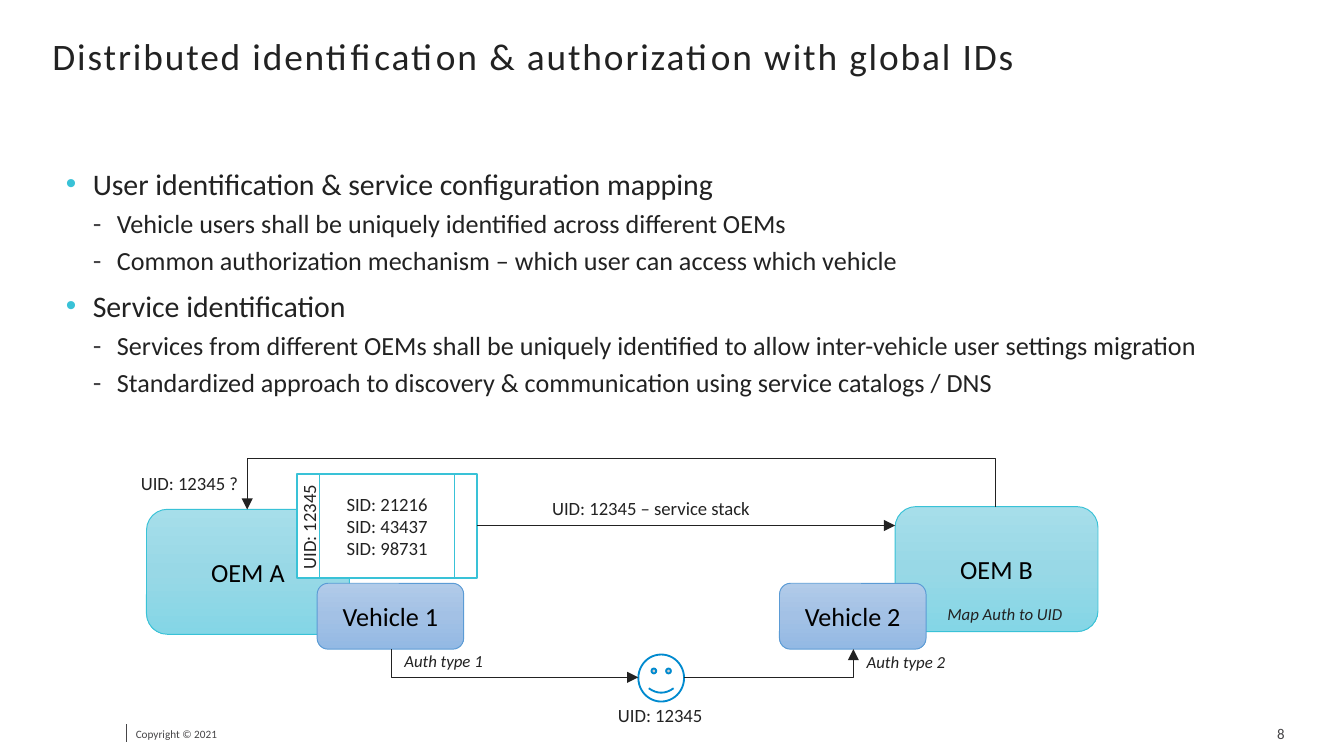
from lxml import etree
from pptx import Presentation
from pptx.dml.color import RGBColor
from pptx.enum import shapes, text
from pptx.oxml import ns
from pptx.util import Inches, Pt

THEME = dict(
    font="Calibri", ink="222222", gray="464547", black="000000", white="FFFFFF",
    cyan="39C2D7", blue="5B9BD5", face="008ACF",
    oem=("A6DEEA", "98D8E6", "84D6E6"), vehicle=("B1CBE9", "A3C1E5", "93B9E4"),
    title=20, level1=16, level2=14, box=14, label=10, note=9, number=8, footer=6,
)
T = THEME

# Content
TITLE = "Distributed identification & authorization with global IDs"
BULLETS = [
    ("User identification & service configuration mapping", [
        "Vehicle users shall be uniquely identified across different OEMs",
        "Common authorization mechanism – which user can access which vehicle"]),
    ("Service identification", [
        "Services from different OEMs shall be uniquely identified to allow "
        "inter-vehicle user settings migration",
        "Standardized approach to discovery & communication using service catalogs / DNS"]),
]
OEMS = [("OEM B", 6.66, 3.77), ("OEM A", 1.09, 3.79)]
VEHICLES = [("Vehicle 1", 2.36), ("Vehicle 2", 5.8)]
SERVICE_IDS = ["SID: 21216", "SID: 43437", "SID: 98731"]
LABELS = [  # text, left, top, width, rotation
    ("UID: 12345", 1.88, 3.78, 0.84, 270),
    ("UID: 12345 ?", 0.95, 3.46, 0.94, 0),
    ("UID: 12345 – service stack", 4.01, 3.65, 1.69, 0),
    ("UID: 12345", 4.5, 5.19, 0.84, 0),
]
NOTES = [  # text, left, top, width
    ("Auth type 1", 2.91, 4.79, 0.79),
    ("Auth type 2", 6.35, 4.8, 0.79),
    ("Map Auth to UID", 6.95, 4.44, 1.07),
]
LEVELS = [  # size, left margin, hanging, space before, line spacing, bullet, bullet colour
    (T["level1"], 0.2, 0.2, 6, 1.0, "•", T["cyan"]),
    (T["level2"], 0.38, 0.18, 5, 0.9, "-", T["gray"]),
]

# Widescreen page, 16 to 9
prs = Presentation()
prs.slide_width = Inches(10)
prs.slide_height = Inches(10 * 9 / 16)
s = prs.slides.add_slide(prs.slide_layouts[1])


def rgb(value):
    return RGBColor.from_string(value)


def sub(parent, tag, **attrs):
    return etree.SubElement(parent, ns.qn(tag), attrs)


def write(p, words, size=T["label"], color=T["ink"], align="LEFT", italic=False, spacing=0):
    p.alignment = getattr(text.PP_ALIGN, align)
    r = p.add_run()
    r.text = words
    r.font.name, r.font.size, r.font.italic = T["font"], Pt(size), italic
    r.font.color.rgb = rgb(color)
    if spacing:
        r._r.get_or_add_rPr().set("spc", str(int(spacing * 100)))


def frame(sp, anchor="TOP", wrap=True, inset=(0.1, 0.05)):
    tf = sp.text_frame
    tf.word_wrap, tf.auto_size = wrap, text.MSO_AUTO_SIZE.NONE
    tf.vertical_anchor = getattr(text.MSO_ANCHOR, anchor)
    tf.margin_left = tf.margin_right = Inches(inset[0])
    tf.margin_top = tf.margin_bottom = Inches(inset[1])
    return tf


def place(sp, *box):
    sp.left, sp.top, sp.width, sp.height = map(Inches, box)


def label(words, *box, rotation=0, anchor="TOP", wrap=False, inset=(0.1, 0.05), **fmt):
    sp = s.shapes.add_textbox(*map(Inches, box))
    sp.rotation = rotation
    write(frame(sp, anchor, wrap, inset).paragraphs[0], words, **fmt)


def shape(kind, box, line, fill, lines=(), width=0.5, **fmt):
    sp = s.shapes.add_shape(getattr(shapes.MSO_SHAPE, kind), *map(Inches, box))
    sp.shadow.inherit = False
    sp.line.color.rgb, sp.line.width = rgb(line), Pt(width)
    if isinstance(fill, str):
        sp.fill.solid()
        sp.fill.fore_color.rgb = rgb(fill)
    else:
        sp.fill.gradient()
        sp.fill.gradient_angle = 270
        stops = sp._element.spPr.find(".//" + ns.qn("a:gsLst"))
        for old in list(stops):
            stops.remove(old)
        for i, color in enumerate(fill):
            sub(sub(stops, "a:gs", pos=str(i * 50000)), "a:srgbClr", val=color)
    tf = frame(sp, "MIDDLE")
    for i, words in enumerate(lines):
        write(tf.add_paragraph() if i else tf.paragraphs[0], words, align="CENTER", **fmt)


def connect(start, end, preset="line", upright=False, lane=None, color=T["ink"], width=0.5,
            arrow=True):
    """Draw a connector; upright ones leave vertically, lane is the y of the middle run."""
    (x1, y1), (x2, y2) = start, end
    if upright:  # ends as they lie before the connector is turned by 270 degrees
        cx, cy, dx, dy = (x1 + x2) / 2, (y1 + y2) / 2, (x2 - x1) / 2, (y2 - y1) / 2
        x1, y1, x2, y2 = cx + dy, cy - dx, cx - dy, cy + dx
    c = s.shapes.add_connector(shapes.MSO_CONNECTOR.STRAIGHT, *map(Inches, (x1, y1, x2, y2)))
    spPr = c._element.spPr
    geom = spPr.find(ns.qn("a:prstGeom"))
    geom.set("prst", preset)
    if upright:
        spPr.find(ns.qn("a:xfrm")).set("rot", str(270 * 60000))
    if lane is not None:
        share = (lane - start[1]) / (end[1] - start[1])
        guides = geom.find(ns.qn("a:avLst"))
        sub(guides, "a:gd", name="adj1", fmla=f"val {round(share * 100000)}")
    c.line.color.rgb, c.line.width = rgb(color), Pt(width)
    if arrow:
        sub(c.line._get_or_add_ln(), "a:tailEnd", type="triangle")
    sub(spPr, "a:effectLst")


# Footer
small = dict(anchor="MIDDLE", wrap=True, inset=(0.07, 0.04), color=T["gray"])
label("Copyright © 2021", 0.94, 5.36, 1.45, 0.2, size=T["footer"], **small)
connect((0.94, 5.39), (0.94, 5.52), color=T["gray"], width=0.25, arrow=False)
label("8", 8.02, 5.36, 1.61, 0.2, size=T["number"], align="RIGHT", spacing=0.1, **small)

# Manufacturers
for name, x, y in OEMS:
    shape("ROUNDED_RECTANGLE", (x, y, 1.51, 0.93), T["cyan"], T["oem"], [name],
          size=T["box"], color=T["black"])

# Title and bullets
title, body = s.placeholders
place(title, 0.39, 0.25, 9.22, 0.34)
write(frame(title, inset=(0, 0)).paragraphs[0], TITLE, size=T["title"], spacing=1)
place(body, 0.39, 1.18, 9.22, 1.86)
tf = frame(body)
items = [item for head, points in BULLETS
         for item in [(0, head)] + [(1, point) for point in points]]
for i, (level, words) in enumerate(items):
    size, margin, hang, before, leading, mark, mark_color = LEVELS[level]
    p = tf.add_paragraph() if i else tf.paragraphs[0]
    p.level = level
    p.line_spacing, p.space_before = leading, Pt(before if i else 0)
    pPr = p._p.get_or_add_pPr()
    pPr.set("marL", str(Inches(margin)))
    pPr.set("indent", str(-Inches(hang)))
    sub(sub(pPr, "a:buClr"), "a:srgbClr", val=mark_color)
    sub(pPr, "a:buChar", char=mark)
    write(p, words, size=size)

# Vehicles, user and service record
for name, x in VEHICLES:
    shape("ROUNDED_RECTANGLE", (x, 4.34, 1.09, 0.49), T["blue"], T["vehicle"], [name],
          size=T["box"], color=T["black"])
shape("SMILEY_FACE", (4.75, 4.87, 0.34, 0.35), T["face"], T["white"], width=1)
connect((2.91, 4.83), (4.75, 5.04), "bentConnector2", upright=True)
connect((5.09, 5.04), (6.35, 4.83), "bentConnector2")
shape("FLOWCHART_PREDEFINED_PROCESS", (2.21, 3.53, 1.34, 0.77), T["cyan"], T["white"],
      SERVICE_IDS, width=1)

# Requests between manufacturers
connect((7.41, 3.77), (1.84, 3.79), "bentConnector3", upright=True, lane=3.41)
connect((3.55, 3.91), (6.66, 3.91))

# Labels
for words, x, y, w, rotation in LABELS:
    label(words, x, y, w, 0.27, rotation=rotation)
for words, x, y, w in NOTES:
    label(words, x, y, w, 0.25, size=T["note"], italic=True)

prs.save("out.pptx")
